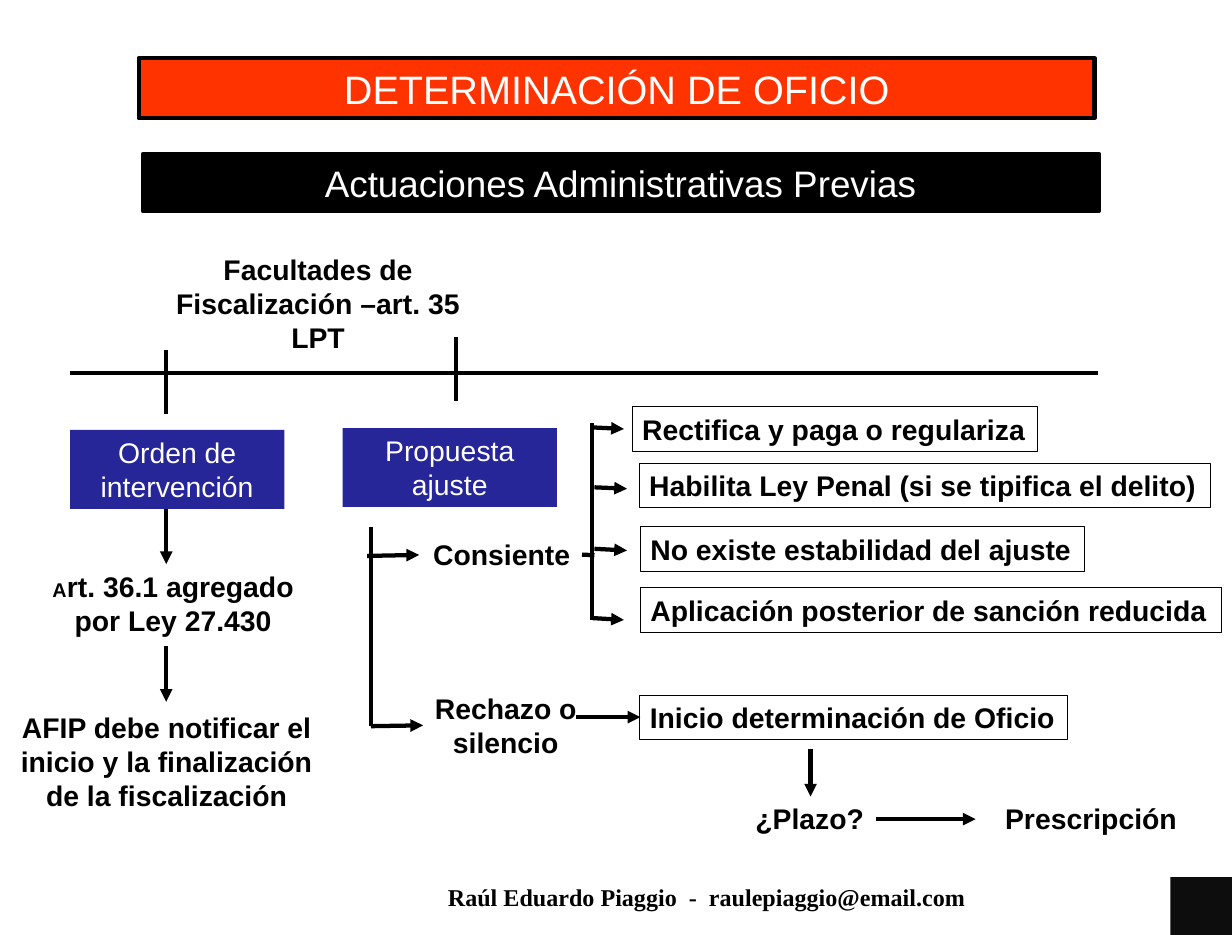
"""Builds the slide on the administrative steps before an ex officio assessment."""
from lxml.etree import SubElement
from pptx import Presentation
from pptx.dml.color import RGBColor
from pptx.enum.shapes import MSO_CONNECTOR, MSO_SHAPE
from pptx.enum.text import MSO_ANCHOR, MSO_AUTO_SIZE, PP_ALIGN
from pptx.oxml.ns import qn
from pptx.util import Pt

BLACK = RGBColor(0x00, 0x00, 0x00)
WHITE = RGBColor(0xFF, 0xFF, 0xFF)
RED = RGBColor(0xFF, 0x33, 0x00)
BLUE = RGBColor(0x26, 0x26, 0x99)


def write(box, text, size=20, color=BLACK, bold=True, align=PP_ALIGN.CENTER,
          wrap=True, font="Arial"):
    frame = box.text_frame
    frame.text = text
    frame.word_wrap = wrap
    frame.auto_size = MSO_AUTO_SIZE.NONE
    para = frame.paragraphs[0]
    para.alignment = align
    para.space_before = Pt(0)
    for span in para.runs:
        span.font.name = font
        span.font.size = Pt(size)
        span.font.bold = bold
        span.font.color.rgb = color


def draw_line(x1, y1, x2, y2, arrow=False):
    line = page.shapes.add_connector(
        MSO_CONNECTOR.STRAIGHT, Pt(x1), Pt(y1), Pt(x2), Pt(y2))
    line.line.color.rgb = BLACK
    line.line.width = Pt(3)
    properties = line._element.spPr
    if arrow:
        SubElement(properties.find(qn("a:ln")), qn("a:tailEnd"), type="triangle")
    SubElement(properties, qn("a:effectLst"))


deck = Presentation()
deck.slide_width, deck.slide_height = Pt(870), Pt(660)
page = deck.slides.add_slide(deck.slide_layouts[5])

title = page.shapes.title
title.left, title.top, title.width, title.height = Pt(98), Pt(41), Pt(675), Pt(42.5)
subtitle = page.shapes.add_shape(
    MSO_SHAPE.RECTANGLE, Pt(101), Pt(108.7), Pt(675), Pt(40.3))
subtitle.shadow.inherit = False
for banner, text, size, fill in (
        (title, "DETERMINACIÓN DE OFICIO", 28, RED),
        (subtitle, "Actuaciones Administrativas Previas", 26, BLACK)):
    banner.fill.solid()
    banner.fill.fore_color.rgb = fill
    banner.line.color.rgb = BLACK
    banner.line.width = Pt(3)
    write(banner, text, size, WHITE, False)
    banner.text_frame.vertical_anchor = MSO_ANCHOR.MIDDLE

footer = page.shapes.add_textbox(Pt(262), Pt(615.6), Pt(427), Pt(39))
write(footer, "Raúl Eduardo Piaggio  -  raulepiaggio@email.com", 17,
      align=PP_ALIGN.RIGHT, font="Times New Roman")
footer.text_frame.margin_top = footer.text_frame.margin_bottom = Pt(7.2)

button = page.shapes.add_shape(
    MSO_SHAPE.ACTION_BUTTON_CUSTOM, Pt(826.5), Pt(619.2), Pt(43.5), Pt(40.8))
button.shadow.inherit = False
button.fill.solid()
button.fill.fore_color.rgb = BLACK
button.line.fill.background()
button_color = button._element.spPr.find(qn("a:solidFill"))[0]
SubElement(button_color, qn("a:alpha"), val="95000")

for left, top, text in ((49.5, 303.5, "Orden de intervención"),
                        (242, 302.2, "Propuesta ajuste")):
    stage = page.shapes.add_shape(
        MSO_SHAPE.RECTANGLE, Pt(left), Pt(top), Pt(151.3), Pt(55.7))
    stage.shadow.inherit = False
    stage.fill.solid()
    stage.fill.fore_color.rgb = BLUE
    stage.line.fill.background()
    write(stage, text, color=WHITE, bold=False)

for left, top, width, height, text in (
        (111.6, 174.2, 226, 80, "Facultades de Fiscalización –art. 35 LPT"),
        (4.3, 497.5, 226.8, 80, "AFIP debe notificar el inicio y la finalización "
                                "de la fiscalización"),
        (281.5, 484.6, 151.3, 55.7, "Rechazo o silencio")):
    note = page.shapes.add_textbox(Pt(left), Pt(top), Pt(width), Pt(height))
    write(note, text)

article = page.shapes.add_textbox(Pt(15), Pt(398.2), Pt(214.6), Pt(55.7))
write(article, "A")
article_para = article.text_frame.paragraphs[0]
initial = article_para.runs[0]
rest = article_para.add_run()
rest.text = "rt. 36.1 agregado por Ley 27.430"
rest.font.name = "Arial"
rest.font.size = Pt(20)
rest.font.bold = True
rest.font.color.rgb = BLACK
initial.font.size = Pt(14)

for left, top, width, text in ((526.3, 562.3, 92.2, "¿Plazo?"),
                               (298.8, 375.8, 112.3, "Consiente"),
                               (702.7, 562.3, 136.8, "Prescripción")):
    label = page.shapes.add_textbox(Pt(left), Pt(top), Pt(width), Pt(31.5))
    write(label, text, align=PP_ALIGN.LEFT, wrap=False)

for left, top, width, text in (
        (446.4, 287, 286.6, "Rectifica y paga o regulariza"),
        (451.4, 327, 403.2, "Habilita Ley Penal (si se tipifica el delito)"),
        (452.2, 371.8, 313.9, "No existe estabilidad del ajuste"),
        (452.2, 414.7, 410.4, "Aplicación posterior de sanción reducida"),
        (451.8, 490.7, 302.4, "Inicio determinación de Oficio")):
    outcome = page.shapes.add_shape(
        MSO_SHAPE.RECTANGLE, Pt(left), Pt(top), Pt(width), Pt(31.5))
    outcome.shadow.inherit = False
    outcome.fill.background()
    outcome.line.color.rgb = BLACK
    outcome.line.width = Pt(0.75)
    write(outcome, text, align=PP_ALIGN.LEFT, wrap=False)

for ends in ((49.5, 263.5, 775.4, 263.5),
             (117.4, 247, 117.4, 292.3),
             (321.8, 237.6, 321.8, 283),
             (262, 371.8, 262, 512.6),
             (418.2, 298.8, 418.2, 437.8),
             (411, 391.5, 419.8, 391.9)):
    draw_line(*ends)

for ends in ((117.4, 359.3, 117.4, 398.2),
             (117.4, 455.8, 117.4, 495.4),
             (262, 512.6, 298.8, 512),
             (259.2, 392.4, 296, 391.7),
             (406.8, 506.2, 452.2, 506.2),
             (572.4, 528.5, 572.4, 562.3),
             (618.5, 578.2, 689, 578.2),
             (418.3, 301.7, 440.6, 302.8),
             (419.8, 344, 442.8, 345),
             (419.8, 387.4, 442.8, 388.6),
             (418.3, 436.3, 440.6, 437.6)):
    draw_line(*ends, arrow=True)

deck.save("out.pptx")
